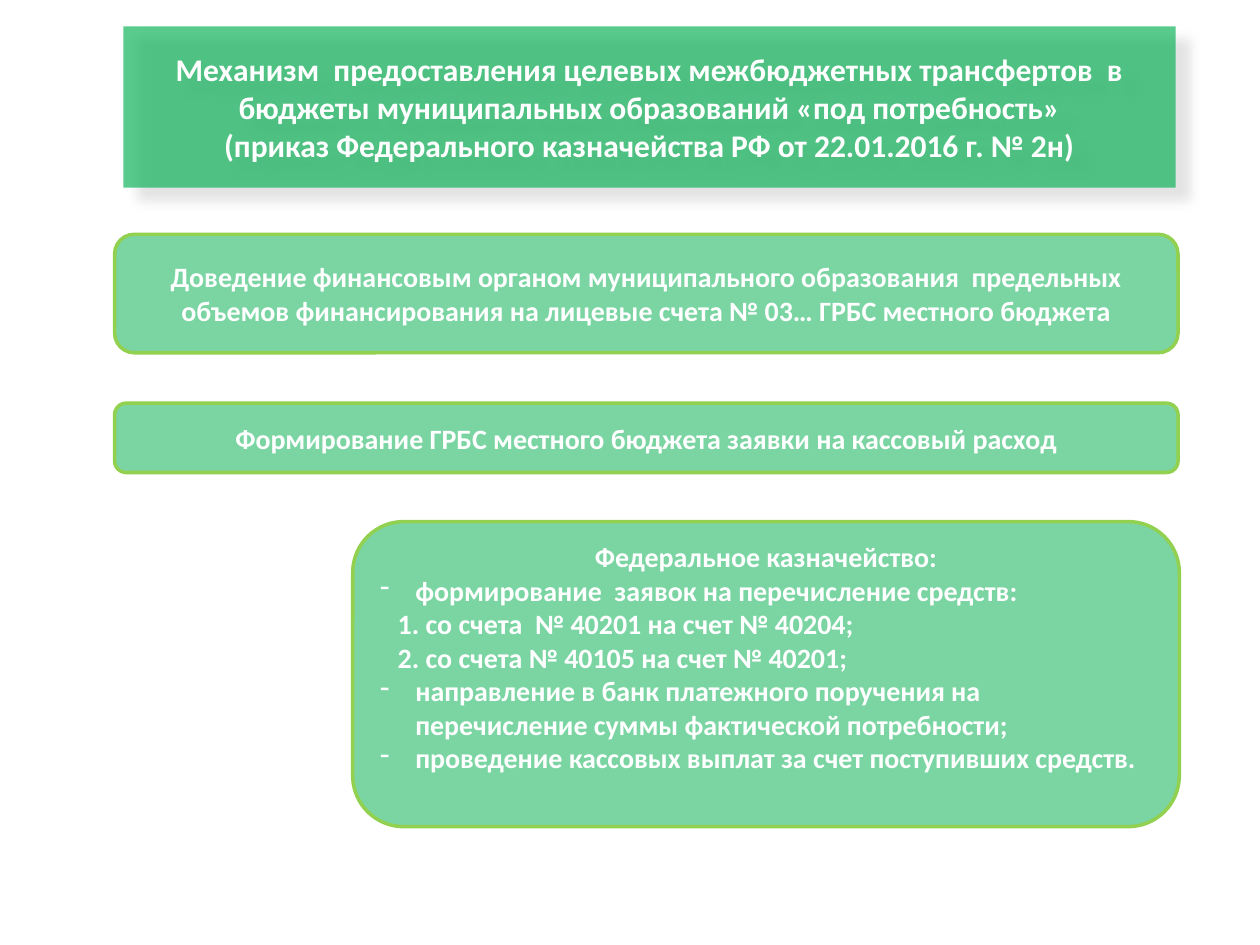
from lxml import etree
from pptx import Presentation
from pptx.dml.color import RGBColor
from pptx.enum.shapes import MSO_SHAPE as Shape
from pptx.enum.text import MSO_ANCHOR as Anchor, PP_ALIGN as Align
from pptx.oxml import parse_xml
from pptx.oxml.ns import nsdecls, qn
from pptx.util import Inches, Pt

GREEN = RGBColor(0x00, 0xB0, 0x50)
LIME = RGBColor(0x92, 0xD0, 0x50)
WHITE = RGBColor(0xFF, 0xFF, 0xFF)

COLS, ROWS = 100, 75  # grid cells across and down the slide


def add_text(tf, text, size=16, font="Calibri", color=WHITE, align=Align.CENTER,
             first=False, bullet=None, margin=0.0):
    """Add one paragraph; margin is in inches, a bullet hangs at its left."""
    p = tf.paragraphs[0] if first else tf.add_paragraph()
    p.text = text
    p.alignment = align
    if margin:
        pPr = p._p.get_or_add_pPr()
        pPr.set("marL", str(Inches(margin)))
        pPr.set("indent", str(-Inches(margin) if bullet else 0))
        if bullet:
            etree.SubElement(pPr, qn("a:buFontTx"))
            etree.SubElement(pPr, qn("a:buChar")).set("char", bullet)
    for r in p.runs:
        r.font.size, r.font.name, r.font.bold = Pt(size), font, True
        r.font.color.rgb = color
    return p


class Deck:
    """Holds the style and the current slide."""

    def __init__(self):
        self.prs = Presentation()
        self.prs.slide_width, self.prs.slide_height = Inches(10), Inches(7.5)
        self.s = self.prs.slides.add_slide(self.prs.slide_layouts[6])
        self.s.background.fill.solid()
        self.s.background.fill.fore_color.rgb = WHITE

    def panel(self, kind, x, y, w, h, opacity):
        """Translucent green panel placed in grid columns and rows."""
        cw, rh = self.prs.slide_width / COLS, self.prs.slide_height / ROWS
        sp = self.s.shapes.add_shape(kind, int(x * cw), int(y * rh), int(w * cw), int(h * rh))
        sp.shadow.inherit = False
        sp.fill.solid()
        sp.fill.fore_color.rgb = GREEN
        color = sp._element.spPr.find(qn("a:solidFill"))[0]
        etree.SubElement(color, qn("a:alpha")).set("val", str(opacity * 1000))
        sp.text_frame.word_wrap = True
        sp.text_frame.vertical_anchor = Anchor.MIDDLE
        return sp

    def title(self, text, *place):
        sp = self.panel(Shape.RECTANGLE, *place, opacity=65)
        sp.line.fill.background()
        sp._element.spPr.find(qn("a:effectLst")).append(parse_xml(
            f'<a:outerShdw {nsdecls("a")} blurRad="{Pt(7)}" dist="{Pt(10)}" dir="2700000" '
            'algn="tl" rotWithShape="0"><a:srgbClr val="000000"><a:alpha val="16000"/>'
            '</a:srgbClr></a:outerShdw>'))
        add_text(sp.text_frame, text, size=18, first=True)

    def step(self, heading, *place):
        sp = self.panel(Shape.ROUNDED_RECTANGLE, *place, opacity=52)
        sp.line.color.rgb, sp.line.width = LIME, Pt(2)
        add_text(sp.text_frame, heading, first=True)
        return sp.text_frame


def main():
    deck = Deck()

    # Heading
    deck.title("Механизм  предоставления целевых межбюджетных трансфертов  в бюджеты "
               "муниципальных образований «под потребность»\v"
               "(приказ Федерального казначейства РФ от 22.01.2016 г. № 2н)",
               9.8, 2.1, 83.5, 12.8)

    # Steps taken by the local budget
    deck.step("Доведение финансовым органом муниципального образования  предельных "
              "объемов финансирования на лицевые счета № 03… ГРБС местного бюджета",
              9.1, 18.6, 84.4, 9.4)
    deck.step("Формирование ГРБС местного бюджета заявки на кассовый расход",
              9.1, 32, 84.4, 5.5)

    # Steps taken by the treasury
    tf = deck.step("Федеральное казначейство:", 28, 41.4, 65.6, 24.2)
    tf.margin_bottom = Inches(0.32)
    dash = dict(align=Align.LEFT, bullet="-", margin=0.28)
    numbered = dict(align=Align.LEFT, margin=0.14)
    for text, style in (
        ("формирование  заявок на перечисление средств:", dash),
        ("1. со счета  № 40201 на счет № 40204;", numbered),
        ("2. со счета № 40105 на счет № 40201;", numbered),
        ("направление в банк платежного поручения на перечисление суммы "
         "фактической потребности;", dash),
        ("проведение кассовых выплат за счет поступивших средств.", dash),
    ):
        add_text(tf, text, **style)

    deck.prs.save("out.pptx")


if __name__ == "__main__":
    main()
